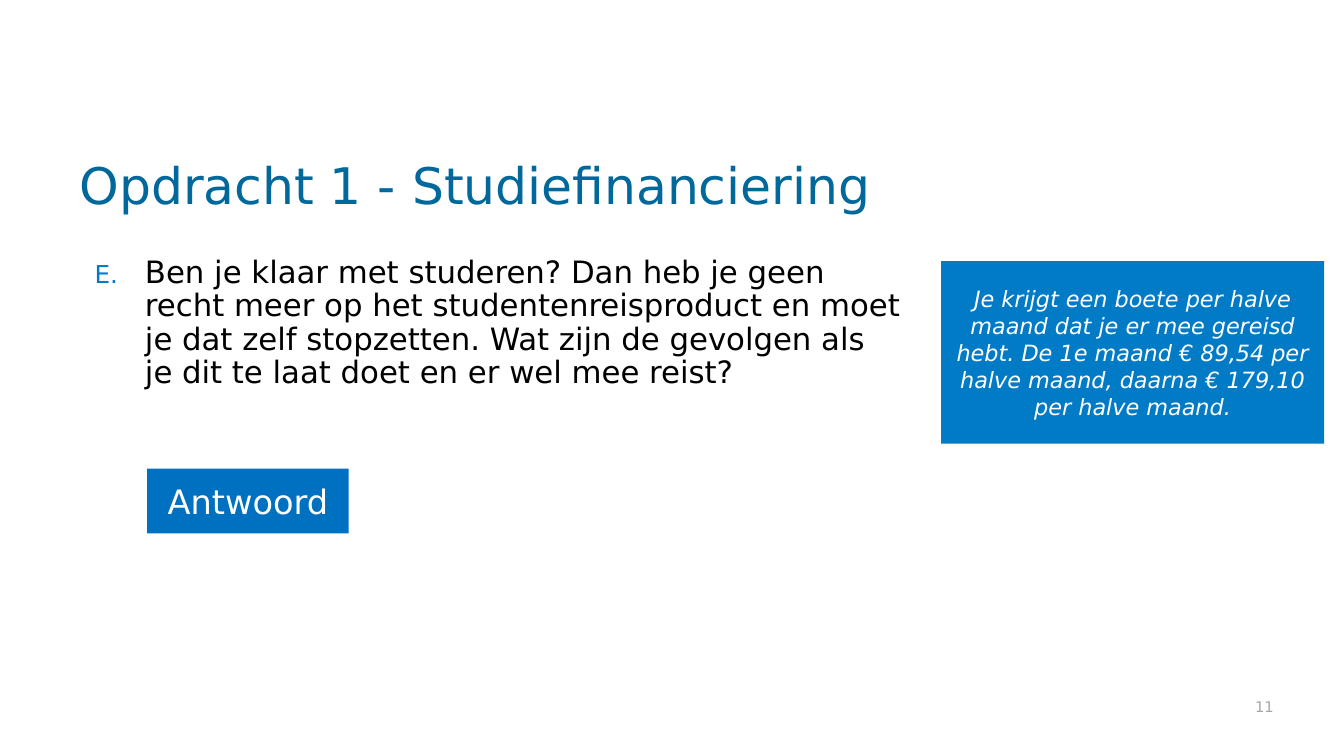
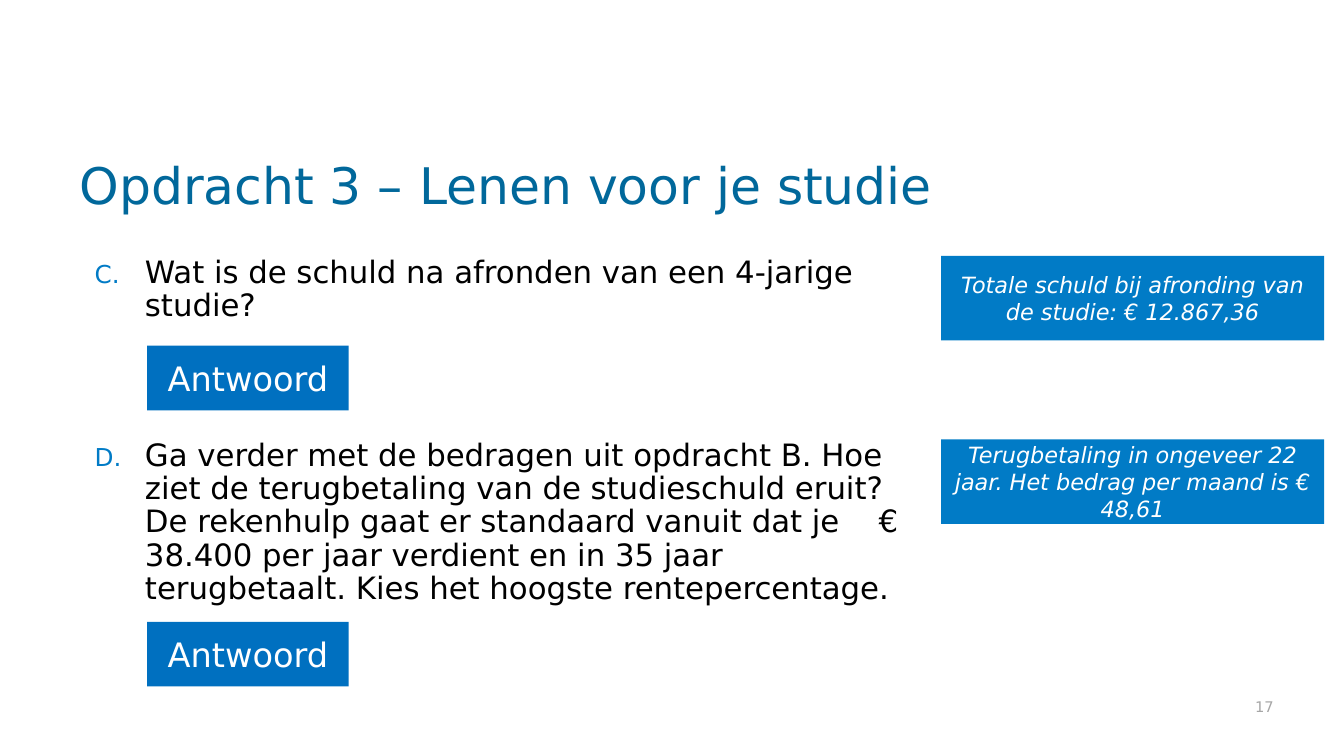
"""Build two quiz slides about student finance."""
import dataclasses

import lxml.etree
import pptx
import pptx.dml.color
import pptx.enum.shapes
import pptx.enum.text
import pptx.oxml.ns
import pptx.util

Cm = pptx.util.Cm
Pt = pptx.util.Pt
Align = pptx.enum.text.PP_ALIGN
Anchor = pptx.enum.text.MSO_ANCHOR


@dataclasses.dataclass(frozen=True)
class Theme:
    """Font, colours and type sizes of the deck."""
    font: str = "DejaVu Sans"
    title: str = "01689B"
    text: str = "000000"
    accent: str = "017BC6"
    button: str = "0070C0"
    light: str = "FFFFFF"
    muted: str = "A6A6A6"
    head_size: float = 36
    body_size: float = 22
    label_size: float = 24
    note_size: float = 16
    page_size: float = 10.5
    leading: float = 0.9


@dataclasses.dataclass(frozen=True)
class Box:
    """A rectangle in centimetres."""
    left: float
    top: float
    width: float
    height: float

    def inner(self, left, top, width, height):
        """Return a box whose corner is offset from this one."""
        return Box(self.left + left, self.top + top, width, height)

    def place(self, shape):
        """Move and size a shape to this box."""
        shape.left, shape.top, shape.width, shape.height = self.sides()

    def sides(self):
        """Return the four lengths for a shape."""
        return Cm(self.left), Cm(self.top), Cm(self.width), Cm(self.height)


THEME = Theme()
PAGE = Box(0, 0, 33.87, 19.05)
HEAD = PAGE.inner(1.75, 2.92, 30.35, 2.64)
BODY = PAGE.inner(1.75, 6.35, 21.23, 10.92)
FOOT = PAGE.inner(18.21, 17.27, 13.89, 0.89)


def colour(code):
    """Turn a hex code into a colour."""
    return pptx.dml.color.RGBColor.from_string(code)


def add_run(para, text, size, code, slant=None):
    """Add one styled run to a paragraph."""
    run = para.add_run()
    run.text = text
    run.font.name = THEME.font
    run.font.size = Pt(size)
    run.font.color.rgb = colour(code)
    run.font.italic = slant
    return run


def add_mark(para, start):
    """Give a paragraph a hanging capital letter."""
    props = para._p.get_or_add_pPr()
    props.set("marL", str(Cm(1.65)))
    props.set("indent", str(Cm(-1.27)))
    name = pptx.oxml.ns.qn
    tint = lxml.etree.SubElement(props, name("a:buClr"))
    lxml.etree.SubElement(tint, name("a:srgbClr"), val=THEME.accent)
    lxml.etree.SubElement(props, name("a:buSzPct"), val="80000")
    lxml.etree.SubElement(props, name("a:buFont"), typeface=THEME.font)
    lxml.etree.SubElement(props, name("a:buAutoNum"),
                          type="alphaUcPeriod", startAt=str(start))


def fill_title(shape, box, text):
    """Place the title at the foot of its box."""
    box.place(shape)
    frame = shape.text_frame
    frame.auto_size = pptx.enum.text.MSO_AUTO_SIZE.NONE
    frame.vertical_anchor = Anchor.BOTTOM
    para = frame.paragraphs[0]
    para.alignment = Align.LEFT
    para.line_spacing = THEME.leading
    add_run(para, text, THEME.head_size, THEME.title)


def fill_list(shape, box, items, start, gap):
    """Place lettered questions, with wide gaps inside them where split."""
    box.place(shape)
    frame = shape.text_frame
    frame.auto_size = pptx.enum.text.MSO_AUTO_SIZE.NONE
    for rank, pieces in enumerate(items):
        para = frame.add_paragraph() if rank else frame.paragraphs[0]
        add_mark(para, start)
        para.line_spacing = THEME.leading
        para.space_before = Pt(gap if rank else 0)
        for order, piece in enumerate(pieces):
            if order:
                space = add_run(para, " ", THEME.body_size, THEME.text)
                space.font._element.set("spc", "2100")
            add_run(para, piece, THEME.body_size, THEME.text)


def add_panel(slide, box, fill, text, size, slant=None):
    """Add a filled box with centred light text."""
    kind = pptx.enum.shapes.MSO_SHAPE.RECTANGLE
    shape = slide.shapes.add_shape(kind, *box.sides())
    shape.shadow.inherit = False
    shape.fill.solid()
    shape.fill.fore_color.rgb = colour(fill)
    shape.line.fill.background()
    frame = shape.text_frame
    frame.word_wrap = True
    frame.vertical_anchor = Anchor.MIDDLE
    para = frame.paragraphs[0]
    para.alignment = Align.CENTER
    add_run(para, text, size, THEME.light, slant)


def add_reply(slide, box, drop, rise, height, text):
    """Add the answer button and the note beside a question."""
    add_panel(slide, box.inner(1.96, drop, 5.08, 1.63), THEME.button,
              "Antwoord", THEME.label_size)
    add_panel(slide, box.inner(21.97, rise, 9.65, height), THEME.accent,
              text, THEME.note_size, True)


def add_page(slide, box, text):
    """Add the page number."""
    frame = slide.shapes.add_textbox(*box.sides()).text_frame
    frame.word_wrap = True
    frame.margin_right = 0
    frame.vertical_anchor = Anchor.BOTTOM
    para = frame.paragraphs[0]
    para.alignment = Align.RIGHT
    add_run(para, text, THEME.page_size, THEME.muted)


def add_quiz(deck, title, page, start, items, replies, gap=12):
    """Add one slide of questions and answers."""
    slide = deck.slides.add_slide(deck.slide_layouts[1])
    fill_title(slide.shapes.title, HEAD, title)
    fill_list(slide.placeholders[1], BODY, items, start, gap)
    add_page(slide, FOOT, page)
    for reply in replies:
        add_reply(slide, BODY, *reply)


def main():
    """Build and save the deck."""
    deck = pptx.Presentation()
    deck.slide_width, deck.slide_height = Cm(PAGE.width), Cm(PAGE.height)
    add_quiz(
        deck, "Opdracht 1 - Studiefinanciering", "11", 5,
        [["Ben je klaar met studeren? Dan heb je geen recht meer op het "
          "studentenreisproduct en moet je dat zelf stopzetten. Wat zijn de "
          "gevolgen als je dit te laat doet en er wel mee reist?"]],
        [(5.46, 0.23, 4.6,
          "Je krijgt een boete per halve maand dat je er mee gereisd hebt. "
          "De 1e maand € 89,54 per halve maand, daarna € 179,10 per halve "
          "maand.")])
    add_quiz(
        deck, "Opdracht 3 – Lenen voor je studie", "17", 3,
        [["Wat is de schuld na afronden van een 4-jarige studie?"],
         ["Ga verder met de bedragen uit opdracht B. Hoe ziet de "
          "terugbetaling van de studieschuld eruit? De rekenhulp gaat er "
          "standaard vanuit dat je",
          "€ 38.400 per jaar verdient en in 35 jaar terugbetaalt. Kies het "
          "hoogste rentepercentage."]],
        [(2.36, 0.1, 2.13,
          "Totale schuld bij afronding van de studie: € 12.867,36"),
         (9.32, 4.72, 2.13,
          "Terugbetaling in ongeveer 22 jaar. Het bedrag per maand is "
          "€ 48,61")],
        gap=83)
    deck.save("out.pptx")


if __name__ == "__main__":
    main()
